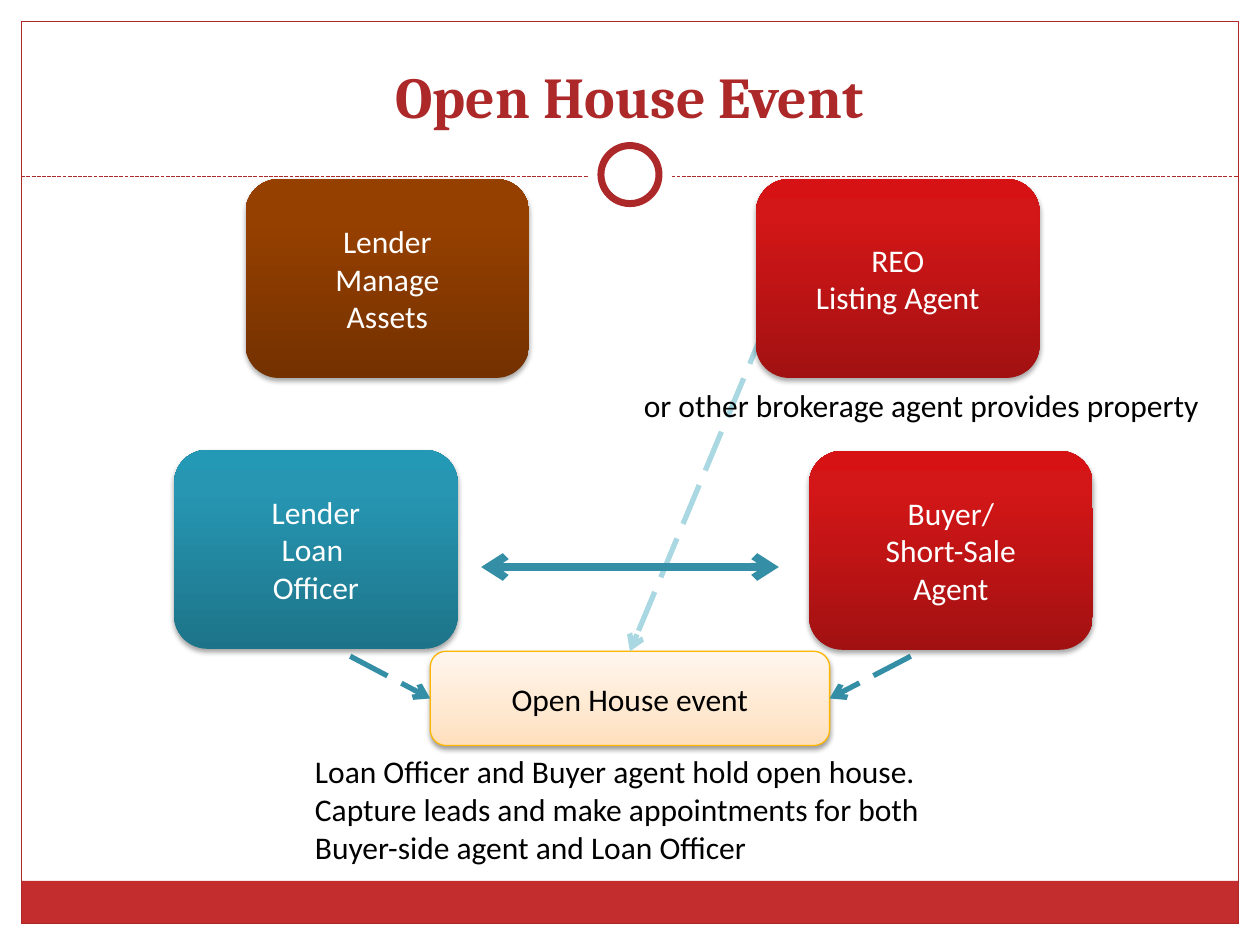
from dataclasses import dataclass

from lxml import etree
from pptx import Presentation
from pptx.dml.color import RGBColor
from pptx.enum.dml import MSO_LINE
from pptx.enum.shapes import MSO_CONNECTOR, MSO_SHAPE
from pptx.enum.text import MSO_ANCHOR, MSO_AUTO_SIZE, PP_ALIGN
from pptx.oxml.ns import qn
from pptx.util import Cm, Pt

STRAIGHT = MSO_CONNECTOR.STRAIGHT
RECTANGLE, ROUNDED, OVAL = MSO_SHAPE.RECTANGLE, MSO_SHAPE.ROUNDED_RECTANGLE, MSO_SHAPE.OVAL
LONG_DASH, FINE_DASH = MSO_LINE.LONG_DASH, MSO_LINE.SQUARE_DOT
MIDDLE, BOTTOM, TOP = MSO_ANCHOR.MIDDLE, MSO_ANCHOR.BOTTOM, MSO_ANCHOR.TOP
CENTER, LEFT = PP_ALIGN.CENTER, PP_ALIGN.LEFT
GROW, FIXED = MSO_AUTO_SIZE.SHAPE_TO_FIT_TEXT, MSO_AUTO_SIZE.NONE
TOP_SIDE, LEFT_SIDE, RIGHT_SIDE = 0, 1, 3


@dataclass(frozen=True)
class Theme:
    """Colours, gradients and type of the slide."""
    white: str = "FFFFFF"
    black: str = "000000"
    crimson: str = "AC2829"
    band: str = "C32D2E"
    teal: str = "348FA6"
    pale_teal: str = "A9D7E2"
    gold: str = "FEB604"
    brown_blend: tuple = ((0, "743100"), (80, "964000"), (100, "974100"))
    red_blend: tuple = ((0, "A21112"), (80, "D31617"), (100, "D71214"))
    teal_blend: tuple = ((0, "1D7489"), (80, "2696B2"), (100, "2499B5"))
    cream_blend: tuple = ((0, "FFDFBC"), (35, "FFE8D0"), (100, "FFF6ED"))
    title_font: str = "Cambria"
    body_font: str = "Calibri"
    title_size: int = 33
    body_size: int = 18


@dataclass(frozen=True)
class Box:
    """A region in centimetres."""
    left: float
    top: float
    width: float
    height: float

    def inner(self, left, top, width, height):
        """Return a box placed relative to this one."""
        return Box(self.left + left, self.top + top, width, height)

    def lengths(self):
        """Return the four sides as slide lengths."""
        return [Cm(side) for side in (self.left, self.top, self.width, self.height)]


THEME = Theme()


def write(frame, text, color, align=CENTER, anchor=MIDDLE, **font):
    """Fill a text frame with one formatted paragraph."""
    frame.vertical_anchor = anchor
    para = frame.paragraphs[0]
    para.text = text
    para.alignment = align
    values = {"name": THEME.body_font, "size": Pt(THEME.body_size), "bold": False, **font}
    for span in para.runs:
        for name, value in values.items():
            setattr(span.font, name, value)
        span.font.color.rgb = RGBColor.from_string(color)


def add_figure(page, kind, box, fill=None, line=None, weight=0.75):
    """Add a flat preset shape."""
    shape = page.shapes.add_shape(kind, *box.lengths())
    shape.shadow.inherit = False
    for paint, color in ((shape.fill, fill), (shape.line.fill, line)):
        if color:
            paint.solid()
            paint.fore_color.rgb = RGBColor.from_string(color)
        else:
            paint.background()
    if line:
        shape.line.width = Pt(weight)
    return shape


def add_color(parent, color):
    """Append a colour element."""
    return etree.SubElement(parent, qn("a:srgbClr"), val=color)


def add_card(page, box, text, blend, color=THEME.white, line=None, opacity=35):
    """Add a rounded card with a gradient and a soft shadow."""
    card = add_figure(page, ROUNDED, box, THEME.white, line)
    card.fill.gradient()
    card.fill.gradient_angle = 90
    properties = card._element.spPr
    stops = properties.find(".//" + qn("a:gsLst"))
    for stop in list(stops):
        stops.remove(stop)
    for position, stop_color in blend:
        add_color(etree.SubElement(stops, qn("a:gs"), pos=str(position * 1000)), stop_color)
    shadow = etree.SubElement(
        properties.find(qn("a:effectLst")), qn("a:outerShdw"), blurRad=str(Pt(3.1)),
        dist=str(Pt(1.8)), dir="5400000", rotWithShape="0")
    etree.SubElement(add_color(shadow, THEME.black), qn("a:alpha"), val=str(opacity * 1000))
    write(card.text_frame, text, color)
    return card


def add_line(page, box, start, end, color, weight, dash=None, arrows=()):
    """Add a straight connector between two points of a box."""
    points = [Cm(value) for x, y in (start, end) for value in (box.left + x, box.top + y)]
    line = page.shapes.add_connector(STRAIGHT, *points)
    line.line.color.rgb = RGBColor.from_string(color)
    line.line.width = Pt(weight)
    if dash:
        line.line.dash_style = dash
    properties = line._element.spPr
    for tip in arrows:
        etree.SubElement(properties.find(qn("a:ln")), qn(tip), type="arrow")
    etree.SubElement(properties, qn("a:effectLst"))
    return line


def add_note(page, box, text):
    """Add an unwrapped text box."""
    frame = page.shapes.add_textbox(*box.lengths()).text_frame
    frame.word_wrap = False
    frame.auto_size = GROW
    write(frame, text, THEME.black, LEFT, TOP)


def build_frame(page, box):
    """Draw the border, bottom band, dashed rule and ring."""
    band, rule, middle = 0.86, 3.13, box.width / 2
    add_figure(page, RECTANGLE, box.inner(0, box.height - band, box.width, band), THEME.band)
    add_figure(page, RECTANGLE, box, line=THEME.crimson)
    add_line(page, box, (0, rule), (box.width, rule), THEME.crimson, 0.75, FINE_DASH)
    for size, line in ((1.7, None), (1.17, THEME.crimson)):
        ring = box.inner(middle - size / 2, rule - 0.04 - size / 2, size, size)
        add_figure(page, OVAL, ring, THEME.white, line, 4)


def build_title(page, box, text):
    """Place and format the title placeholder."""
    title = page.shapes.title
    for name, value in zip(("left", "top", "width", "height"), box.lengths()):
        setattr(title, name, value)
    title.text_frame.auto_size = FIXED
    write(title.text_frame, text, THEME.crimson, anchor=BOTTOM,
          name=THEME.title_font, size=Pt(THEME.title_size), bold=True)


def build_diagram(page, box):
    """Draw the event, its participants, arrows and notes."""
    event_width, middle = 8.05, box.width / 2
    event_left, event_top, event_middle = middle - event_width / 2, 9.52, 10.47
    event = add_card(page, box.inner(event_left, event_top, event_width, 1.9),
                     "Open House event", THEME.cream_blend, THEME.black, THEME.gold, 38)
    links = (
        ((15.44, 2.94), (middle, event_top), THEME.pale_teal, TOP_SIDE),
        ((7.06, 9.62), (event_left, event_middle), THEME.teal, LEFT_SIDE),
        ((18.36, 9.62), (event_left + event_width, event_middle), THEME.teal, RIGHT_SIDE),
    )
    for start, end, color, side in links:
        link = add_line(page, box, start, end, color, 3, LONG_DASH, ("a:tailEnd",))
        link.end_connect(event, side)
    add_line(page, box, (9.7, 7.82), (15.7, 7.82), THEME.teal, 4.5,
             arrows=("a:headEnd", "a:tailEnd"))
    cards = (
        (4.95, 0, "Lender\nManage\nAssets", THEME.brown_blend),
        (15.24, 0, "REO\nListing Agent", THEME.red_blend),
        (3.51, 5.46, "Lender\nLoan \nOfficer", THEME.teal_blend),
        (16.31, 5.48, "Buyer/\nShort-Sale\nAgent", THEME.red_blend),
    )
    for left, top, text, blend in cards:
        add_card(page, box.inner(left, top, 5.72, 4.01), text, blend)
    add_note(page, box.inner(12.73, 4.04, 11.84, 1.02),
             "or other brokerage agent provides property")
    add_note(page, box.inner(6.1, 11.43, 12.98, 2.57),
             "Loan Officer and Buyer agent hold open house.\n"
             "Capture leads and make appointments for both \n"
             "Buyer-side agent and Loan Officer")


def main():
    """Build and save the deck."""
    deck = Presentation()
    deck.slide_width, deck.slide_height = Cm(25.4), Cm(19.05)
    page = deck.slides.add_slide(deck.slide_layouts.get_by_name("Title Only"))
    build_frame(page, Box(0.43, 0.43, 24.54, 18.19))
    build_title(page, Box(0.84, 0.64, 23.7, 2.11), "Open House Event")
    build_diagram(page, Box(0, 3.61, 25.4, 14.15))
    deck.save("out.pptx")


if __name__ == "__main__":
    main()
